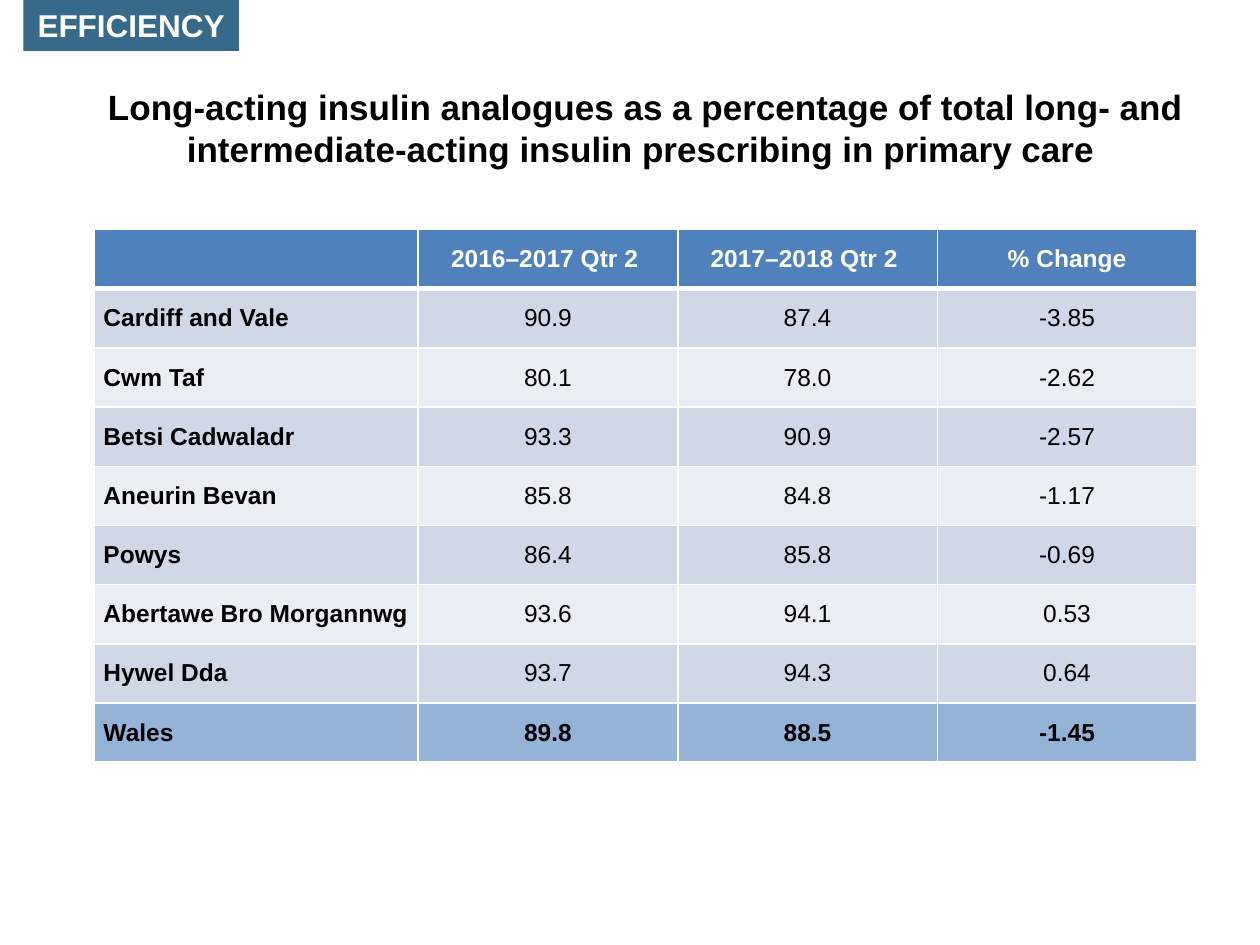
from dataclasses import dataclass

from lxml.etree import SubElement
from pptx import Presentation
from pptx.dml.color import RGBColor
from pptx.enum.shapes import MSO_SHAPE
from pptx.enum.text import MSO_ANCHOR, PP_ALIGN
from pptx.oxml.ns import qn
from pptx.util import Pt

FONT_NAME = "Arial"
WHITE, BLACK = "FFFFFF", "000000"
HEADER_FILL, TOTAL_FILL, LABEL_FILL = "4F81BD", "95B3D7", "37698A"
BAND_FILLS = ("D0D8E8", "E9EDF4")
TITLE = ("Long-acting insulin analogues as a percentage of total long- and "
         "intermediate-acting insulin prescribing in primary care ")
HEADINGS = ("", "2016–2017 Qtr 2 ", "2017–2018 Qtr 2 ", "% Change")
COLUMN_WIDTHS = (185, 148.33, 148.33, 148.33)
ROW_HEIGHT = 33.84


@dataclass(frozen=True)
class HealthBoard:
    name: str
    before: str
    after: str
    change: str


BOARDS = (
    HealthBoard("Cardiff and Vale", "90.9", "87.4", "-3.85"),
    HealthBoard("Cwm Taf", "80.1", "78.0", "-2.62"),
    HealthBoard("Betsi Cadwaladr", "93.3", "90.9", "-2.57"),
    HealthBoard("Aneurin Bevan", "85.8", "84.8", "-1.17"),
    HealthBoard("Powys", "86.4", "85.8", "-0.69"),
    HealthBoard("Abertawe Bro Morgannwg", "93.6", "94.1", "0.53"),
    HealthBoard("Hywel Dda", "93.7", "94.3", "0.64"),
    HealthBoard("Wales", "89.8", "88.5", "-1.45"),
)


def set_color(color_format, hex_color: str) -> None:
    color_format.rgb = RGBColor.from_string(hex_color)


def set_fill(target, hex_color: str) -> None:
    target.fill.solid()
    set_color(target.fill.fore_color, hex_color)


def write_text(text_frame, text: str, size: float, hex_color: str,
               bold: bool = True, alignment=PP_ALIGN.CENTER) -> None:
    paragraph = text_frame.paragraphs[0]
    paragraph.text = text
    paragraph.alignment = alignment
    paragraph.font.name = FONT_NAME
    paragraph.font.size = Pt(size)
    paragraph.font.bold = bold
    set_color(paragraph.font.color, hex_color)


def set_borders(cell, bottom_width: float, top_width: float) -> None:
    properties = cell._tc.get_or_add_tcPr()
    widths = {"a:lnL": 1, "a:lnR": 1, "a:lnT": top_width, "a:lnB": bottom_width}
    for tag, width in widths.items():
        line = SubElement(properties, qn(tag), w=str(Pt(width)))
        line_fill = SubElement(line, qn("a:solidFill"))
        SubElement(line_fill, qn("a:srgbClr"), val=WHITE)


def draw_cell(cell, text: str, fill: str, color: str, bold: bool, alignment,
              top_width: float = 1, bottom_width: float = 1) -> None:
    set_borders(cell, bottom_width, top_width)
    set_fill(cell, fill)
    cell.vertical_anchor = MSO_ANCHOR.MIDDLE
    cell.margin_left = cell.margin_right = Pt(5.14)
    cell.margin_top = cell.margin_bottom = Pt(1.44)
    write_text(cell.text_frame, text, 14, color, bold, alignment)


def draw_table(slide) -> None:
    row_count = len(BOARDS) + 1
    table = slide.shapes.add_table(
        row_count, len(HEADINGS), Pt(54), Pt(131.2),
        Pt(sum(COLUMN_WIDTHS)), Pt(ROW_HEIGHT * row_count)).table
    for column, width in zip(table.columns, COLUMN_WIDTHS):
        column.width = Pt(width)
    for row in table.rows:
        row.height = Pt(ROW_HEIGHT)

    # Header row, with a thick line below
    for column_index, heading in enumerate(HEADINGS):
        draw_cell(table.cell(0, column_index), heading, HEADER_FILL, WHITE,
                  True, PP_ALIGN.CENTER, bottom_width=3)

    # Banded rows, closed by the national total
    for row_index, board in enumerate(BOARDS, start=1):
        is_total = row_index == len(BOARDS)
        fill = TOTAL_FILL if is_total else BAND_FILLS[(row_index - 1) % 2]
        values = (board.name, board.before, board.after, board.change)
        for column_index, value in enumerate(values):
            is_name = column_index == 0
            draw_cell(table.cell(row_index, column_index), value, fill, BLACK,
                      is_name or is_total,
                      PP_ALIGN.LEFT if is_name else PP_ALIGN.CENTER,
                      top_width=3 if row_index == 1 else 1)


def draw_title(slide) -> None:
    title = slide.shapes.add_textbox(Pt(54), Pt(43.2), Pt(630), Pt(59.76))
    title.text_frame.word_wrap = True
    title.text_frame.vertical_anchor = MSO_ANCHOR.MIDDLE
    write_text(title.text_frame, TITLE, 20, BLACK)


def draw_section_label(slide) -> None:
    label = slide.shapes.add_shape(
        MSO_SHAPE.RECTANGLE, Pt(13.4), Pt(0), Pt(123.1), Pt(29.08))
    label.shadow.inherit = False
    set_fill(label, LABEL_FILL)
    label.line.fill.background()
    label.text_frame.word_wrap = False
    label.text_frame.vertical_anchor = MSO_ANCHOR.MIDDLE
    write_text(label.text_frame, "EFFICIENCY", 18, WHITE)


def main() -> None:
    presentation = Presentation()
    presentation.slide_width, presentation.slide_height = Pt(720), Pt(540)
    slide = presentation.slides.add_slide(presentation.slide_layouts[6])
    draw_title(slide)
    draw_table(slide)
    draw_section_label(slide)
    presentation.save("out.pptx")


if __name__ == "__main__":
    main()
